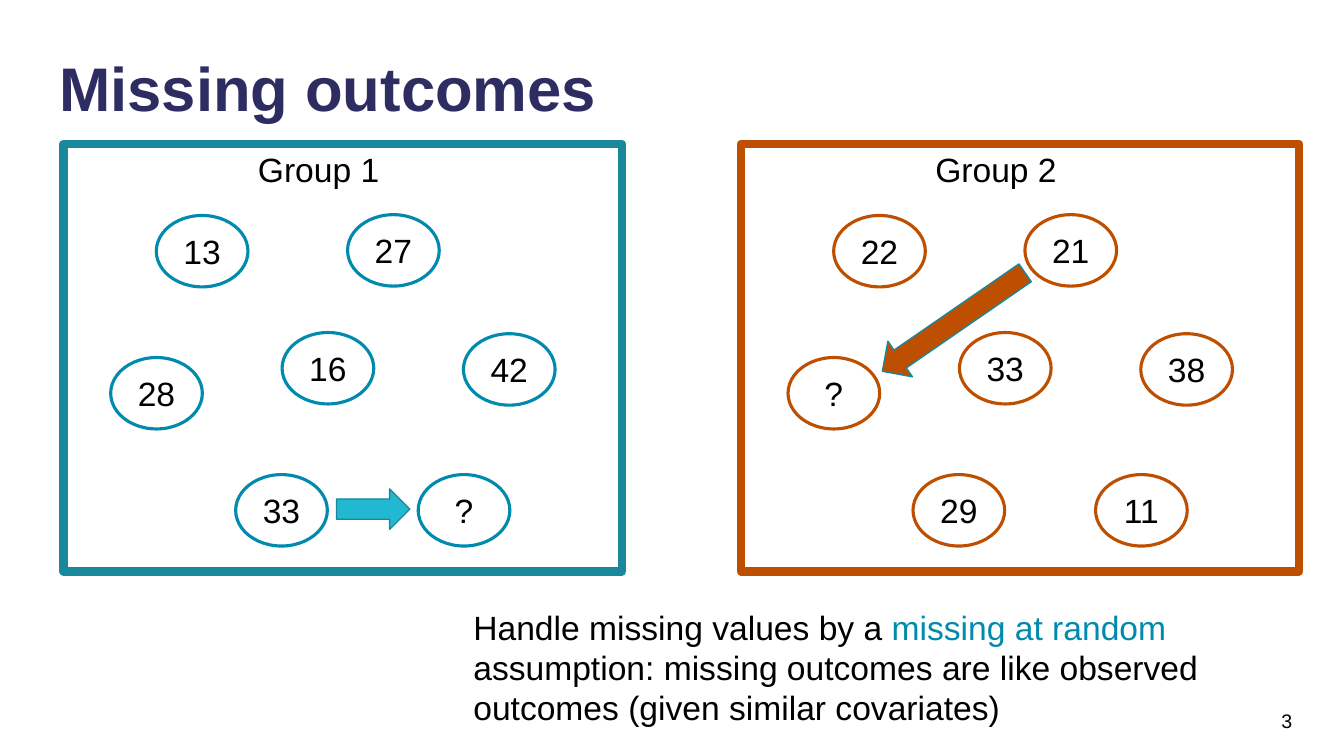
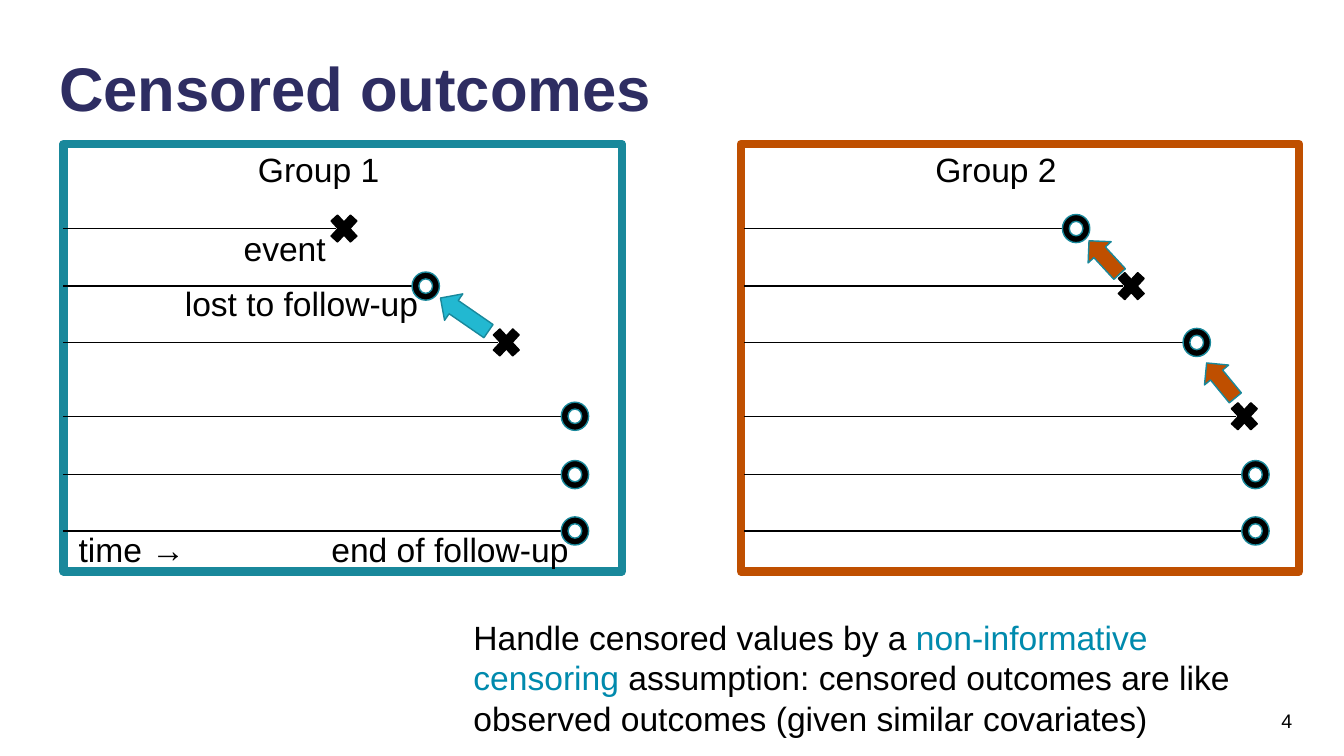
from pptx import Presentation
from pptx import util as u
from pptx.dml import color
from pptx.enum import shapes, text
from pptx.oxml import xmlchemy
from lxml import etree

COLORS = {
    "title": "2E2D62",
    "ink": "000000",
    "accent": "008AAD",
    "teal": "19889B",
    "cyan": "22B8D1",
    "orange": "BF4F00",
}
FONT = "Arial"
ALIGN = text.PP_ALIGN
SHAPE = shapes.MSO_SHAPE
PANEL_TOP, PANEL_WIDTH, PANEL_HEIGHT = 3.63, 14.07, 10.77
GROUPS = {
    "Group 1": {"left": 1.6, "frame": "teal", "bubble": "accent", "arrow": "cyan"},
    "Group 2": {"left": 18.67, "frame": "orange", "bubble": "orange", "arrow": "orange"},
}
BUBBLE_SPOTS = [(2.34, 1.8), (7.16, 1.78), (1.19, 5.38), (5.51, 4.75),
                (10.08, 4.78), (4.34, 8.33), (8.94, 8.33)]
TIMELINE_ROWS = [2.13, 3.58, 5, 6.86, 8.33, 9.75]
MARKERS = {
    "event": {"kind": SHAPE.MATH_MULTIPLY, "size": (0.94, 1.02), "line": "ink", "gap": 0.2},
    "censored": {"kind": SHAPE.DONUT, "size": (0.69, 0.71), "line": "teal", "gap": 0.33},
}


def rgb(name):
    return color.RGBColor.from_string(COLORS[name])


def apply(target, values):
    for attribute, value in values.items():
        setattr(target, attribute, value)


def cm_box(left, top, width, height):
    return [u.Cm(length) for length in (left, top, width, height)]


def write(frame, parts, size=24, bold=False, align=ALIGN.LEFT,
          anchor=text.MSO_ANCHOR.TOP, spacing=1):
    apply(frame, {"word_wrap": True, "auto_size": text.MSO_AUTO_SIZE.NONE,
                  "vertical_anchor": anchor})
    paragraph = frame.paragraphs[0]
    apply(paragraph, {"alignment": align, "line_spacing": spacing})
    for words, ink in parts:
        run = paragraph.add_run()
        run.text = words
        apply(run.font, {"name": FONT, "size": u.Pt(size), "bold": bold})
        run.font.color.rgb = rgb(ink)


def add_label(slide, box, words, **style):
    label = slide.shapes.add_textbox(*cm_box(*box))
    write(label.text_frame, [(words, "ink")], **style)


def add_figure(slide, kind, box, line, width, fill=None, rotation=0):
    figure = slide.shapes.add_shape(kind, *cm_box(*box))
    apply(figure, {"rotation": rotation})
    figure.shadow.inherit = False
    if fill:
        figure.fill.solid()
        figure.fill.fore_color.rgb = rgb(fill)
    else:
        figure.fill.background()
    figure.line.color.rgb = rgb(line)
    figure.line.width = u.Pt(width)
    return figure


def add_panel(slide, name):
    group = GROUPS[name]
    left = group["left"]
    add_label(slide, (left + 3.51, PANEL_TOP, 5.84, 1.27), name, align=ALIGN.CENTER)
    add_figure(slide, SHAPE.RECTANGLE, (left, PANEL_TOP, PANEL_WIDTH, PANEL_HEIGHT),
               group["frame"], 6)


def add_arrow(slide, name, box, rotation=0):
    x, y, width, height = box
    group = GROUPS[name]
    add_figure(slide, SHAPE.RIGHT_ARROW, (group["left"] + x, PANEL_TOP + y, width, height),
               "teal", 1, group["arrow"], rotation)


def add_bubbles(slide, name, outcomes):
    group = GROUPS[name]
    for (x, y), outcome in zip(BUBBLE_SPOTS, outcomes):
        bubble = add_figure(slide, SHAPE.OVAL,
                            (group["left"] + x, PANEL_TOP + y, 2.31, 1.8),
                            group["bubble"], 2.25)
        apply(bubble.text_frame, dict.fromkeys(
            ("margin_left", "margin_right", "margin_top", "margin_bottom"), 0))
        write(bubble.text_frame, [(outcome, "ink")], align=ALIGN.CENTER,
              anchor=text.MSO_ANCHOR.MIDDLE)


def add_timelines(slide, name, start, endings):
    left = GROUPS[name]["left"]
    for row, (ending, center) in zip(TIMELINE_ROWS, endings):
        marker = MARKERS[ending]
        y = PANEL_TOP + row
        timeline = slide.shapes.add_connector(
            shapes.MSO_CONNECTOR.STRAIGHT,
            *cm_box(left + start, y, left + center - marker["gap"], y))
        timeline.line.color.rgb = rgb("ink")
        timeline.line.width = u.Pt(1)
        etree.SubElement(timeline._element.spPr, xmlchemy.qn("a:effectLst"))
        width, height = marker["size"]
        add_figure(slide, marker["kind"],
                   (left + center - width / 2, y - height / 2, width, height),
                   marker["line"], 1, "ink")


def add_captions(slide, name, captions):
    for words, x, y, width, align in captions:
        add_label(slide, (GROUPS[name]["left"] + x, PANEL_TOP + y, width, 1.27),
                  words, align=align)


def add_assumption(slide, box, parts):
    assumption = slide.shapes.add_textbox(*cm_box(*box))
    write(assumption.text_frame, parts)


def start_slide(prs, heading, number):
    slide = prs.slides.add_slide(prs.slide_layouts[5])
    title = slide.shapes.title
    apply(title, dict(zip(("left", "top", "width", "height"),
                          cm_box(1.24, 0.71, 31.57, 3.18))))
    write(title.text_frame, [(heading, "title")], size=44, bold=True,
          anchor=text.MSO_ANCHOR.MIDDLE, spacing=0.9)
    for name in GROUPS:
        add_panel(slide, name)
    add_label(slide, (23.93, 17.65, 8.89, 1.02), number, size=14,
              align=ALIGN.RIGHT, anchor=text.MSO_ANCHOR.MIDDLE)
    return slide


def build_missing(prs):
    slide = start_slide(prs, "Missing outcomes", "3")
    add_bubbles(slide, "Group 1", ["13", "27", "28", "16", "42", "33", "?"])
    add_bubbles(slide, "Group 2", ["22", "21", "?", "33", "38", "29", "11"])
    add_arrow(slide, "Group 1", (6.88, 8.69, 1.85, 1.02))
    add_arrow(slide, "Group 2", (3.18, 3.94, 4.37, 1.09), 145.4)
    add_assumption(slide, (11.68, 15.16, 19.35, 3.33), [
        ("Handle missing values by a ", "ink"),
        ("missing at random ", "accent"),
        ("assumption: missing outcomes are like observed outcomes "
         "(given similar covariates)", "ink"),
    ])


def build_censored(prs):
    slide = start_slide(prs, "Censored outcomes", "4")
    add_timelines(slide, "Group 1", 0, [
        ("event", 7.07), ("censored", 9.13), ("event", 11.16),
        *[("censored", 12.89)] * 3])
    add_timelines(slide, "Group 2", 0.08, [
        ("censored", 8.45), ("event", 9.84), ("censored", 11.49), ("event", 12.69),
        *[("censored", 12.97)] * 2])
    add_captions(slide, "Group 1", [
        ("event", 4.29, 1.98, 2.79, ALIGN.LEFT),
        ("lost to follow-up", 2.18, 3.38, 7.01, ALIGN.RIGHT),
        ("end of follow-up", 5.97, 9.58, 7.01, ALIGN.RIGHT),
        ("time →", 0.13, 9.58, 3.66, ALIGN.LEFT),
    ])
    add_arrow(slide, "Group 1", (9.37, 3.89, 1.47, 0.81), 214.6)
    add_arrow(slide, "Group 2", (8.59, 2.46, 1.14, 0.79), 227.3)
    add_arrow(slide, "Group 2", (11.53, 5.56, 1.14, 0.79), 230.6)
    add_assumption(slide, (11.68, 15.42, 20.29, 3.33), [
        ("Handle censored values by a ", "ink"),
        ("non-informative censoring ", "accent"),
        ("assumption: censored outcomes are like observed outcomes "
         "(given similar covariates)", "ink"),
    ])


def main():
    prs = Presentation()
    apply(prs, {"slide_width": u.Cm(33.87), "slide_height": u.Cm(19.05)})
    build_missing(prs)
    build_censored(prs)
    prs.save("out.pptx")


if __name__ == "__main__":
    main()
